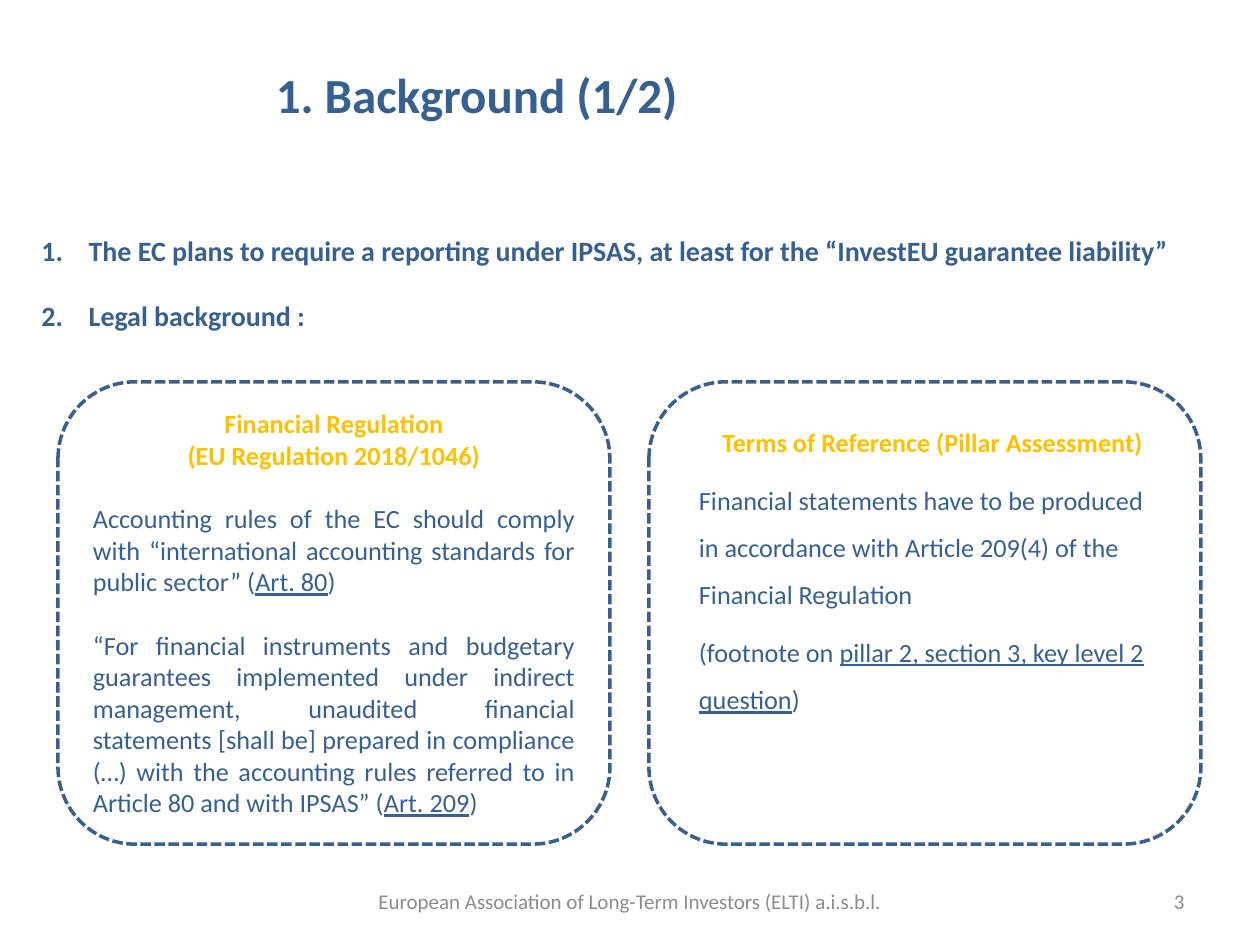
import pptx
import pptx.dml.color
import pptx.enum.dml
import pptx.enum.shapes
import pptx.enum.text
import pptx.oxml.ns
import pptx.util
from lxml import etree

Pt = pptx.util.Pt
ALIGN = pptx.enum.text.PP_ALIGN
ANCHOR = pptx.enum.text.MSO_ANCHOR

THEME = {
    "font": "Calibri",
    "blue": "376092", "border": "3A5F8C", "gold": "FFC000", "grey": "8C8C8C",
    "title": 28, "points": 16, "card": 15, "footer": 12,
}

TITLE = "1. Background (1/2)"
POINTS = [
    "The EC plans to require a reporting under IPSAS, at least for the “InvestEU guarantee liability”",
    "Legal background :",
]
# A paragraph is a string or a list of pieces; every second piece is underlined.
REGULATION = {
    "heading": ["Financial Regulation", "(EU Regulation 2018/1046)"],
    "body": [
        ["Accounting rules of the EC should comply with “international accounting "
         "standards for public sector” (", "Art. 80", ")"],
        ["“For financial instruments and budgetary guarantees implemented under indirect "
         "management, unaudited financial statements [shall be] prepared in compliance (…) "
         "with the accounting rules referred to in Article 80 and with IPSAS” (",
         "Art. 209", ")"],
    ],
    "anchor": ANCHOR.MIDDLE,
    "body_align": ALIGN.JUSTIFY,
    "spacing": {"before": 18.3},
}
REFERENCE_TERMS = {
    "heading": ["Terms of Reference (Pillar Assessment)"],
    "body": [
        "Financial statements have to be produced in accordance with Article 209(4) "
        "of the Financial Regulation",
        ["(footnote on ", "pillar 2, section 3, key level 2 question", ")"],
    ],
    "anchor": ANCHOR.TOP,
    "body_align": ALIGN.LEFT,
    "spacing": {"line": 1.5, "after": 6, "indent": 8.64},
}
FOOTER = "European Association of Long-Term Investors (ELTI) a.i.s.b.l."
PAGE_NUMBER = "3"

SLIDE_WIDTH, SLIDE_HEIGHT = 720, 540
CARD_LEFT, CARD_TOP, CARD_WIDTH, CARD_HEIGHT, CARD_GAP = 33.1, 218.2, 315.4, 264.2, 22.3
FOOTER_TOP, FOOTER_HEIGHT = 500.4, 28.8


def rgb(name):
    return pptx.dml.color.RGBColor.from_string(THEME[name])


def write(frame, paragraphs, *, size, color, bold=False, align=ALIGN.LEFT, line=None,
          before=0, after=0, indent=0, numbered=False):
    """Append paragraphs to a text frame, filling its empty first one."""
    for pieces in paragraphs:
        first = not frame.paragraphs[0].runs
        paragraph = frame.paragraphs[0] if first else frame.add_paragraph()
        paragraph.alignment = align
        paragraph.line_spacing = line
        paragraph.space_before = Pt(0 if first else before)
        paragraph.space_after = Pt(after)
        properties = paragraph._p.get_or_add_pPr()
        properties.set("marL", str(Pt(indent)))
        properties.set("indent", str(Pt(-indent if numbered else 0)))
        if numbered:
            bullet = etree.SubElement(properties, pptx.oxml.ns.qn("a:buAutoNum"))
            bullet.set("type", "arabicPeriod")
        for index, piece in enumerate([pieces] if isinstance(pieces, str) else pieces):
            run = paragraph.add_run()
            run.text = piece
            run.font.name = THEME["font"]
            run.font.size = Pt(THEME[size])
            run.font.bold = bold
            run.font.underline = index % 2 == 1
            run.font.color.rgb = rgb(color)


def add_text(slide, box, paragraphs, anchor=ANCHOR.MIDDLE, **text_format):
    frame = slide.shapes.add_textbox(*map(Pt, box)).text_frame
    frame.word_wrap = True
    frame.vertical_anchor = anchor
    write(frame, paragraphs, **text_format)


def add_card(slide, left, card):
    outline = slide.shapes.add_shape(
        pptx.enum.shapes.MSO_SHAPE.ROUNDED_RECTANGLE,
        Pt(left), Pt(CARD_TOP), Pt(CARD_WIDTH), Pt(CARD_HEIGHT))
    outline.shadow.inherit = False
    outline.fill.background()
    outline.line.color.rgb = rgb("border")
    outline.line.width = Pt(2)
    outline.line.dash_style = pptx.enum.dml.MSO_LINE.SQUARE_DOT
    frame = outline.text_frame
    frame.word_wrap = True
    frame.vertical_anchor = card["anchor"]
    heading_spacing = {**card["spacing"], "before": 0}
    write(frame, card["heading"], size="card", color="gold", bold=True,
          align=ALIGN.CENTER, **heading_spacing)
    write(frame, card["body"], size="card", color="blue",
          align=card["body_align"], **card["spacing"])


def main():
    deck = pptx.Presentation()
    deck.slide_width, deck.slide_height = Pt(SLIDE_WIDTH), Pt(SLIDE_HEIGHT)
    slide = deck.slides.add_slide(deck.slide_layouts[6])

    add_text(slide, (150.5, 10.8, 361.4, 85.7), [TITLE],
             size="title", color="blue", bold=True)
    add_text(slide, (0, FOOTER_TOP, SLIDE_WIDTH, FOOTER_HEIGHT), [FOOTER],
             size="footer", color="grey", align=ALIGN.CENTER)
    add_text(slide, (516.2, FOOTER_TOP, 167.8, FOOTER_HEIGHT), [PAGE_NUMBER],
             size="footer", color="grey", align=ALIGN.RIGHT)
    add_text(slide, (16.6, 120.2, 686.2, 85.7), POINTS, anchor=ANCHOR.TOP,
             size="points", color="blue", bold=True, line=1.5, before=2.4, after=6,
             indent=27, numbered=True)
    for column, card in enumerate([REGULATION, REFERENCE_TERMS]):
        add_card(slide, CARD_LEFT + column * (CARD_WIDTH + CARD_GAP), card)

    deck.save("out.pptx")


if __name__ == "__main__":
    main()
